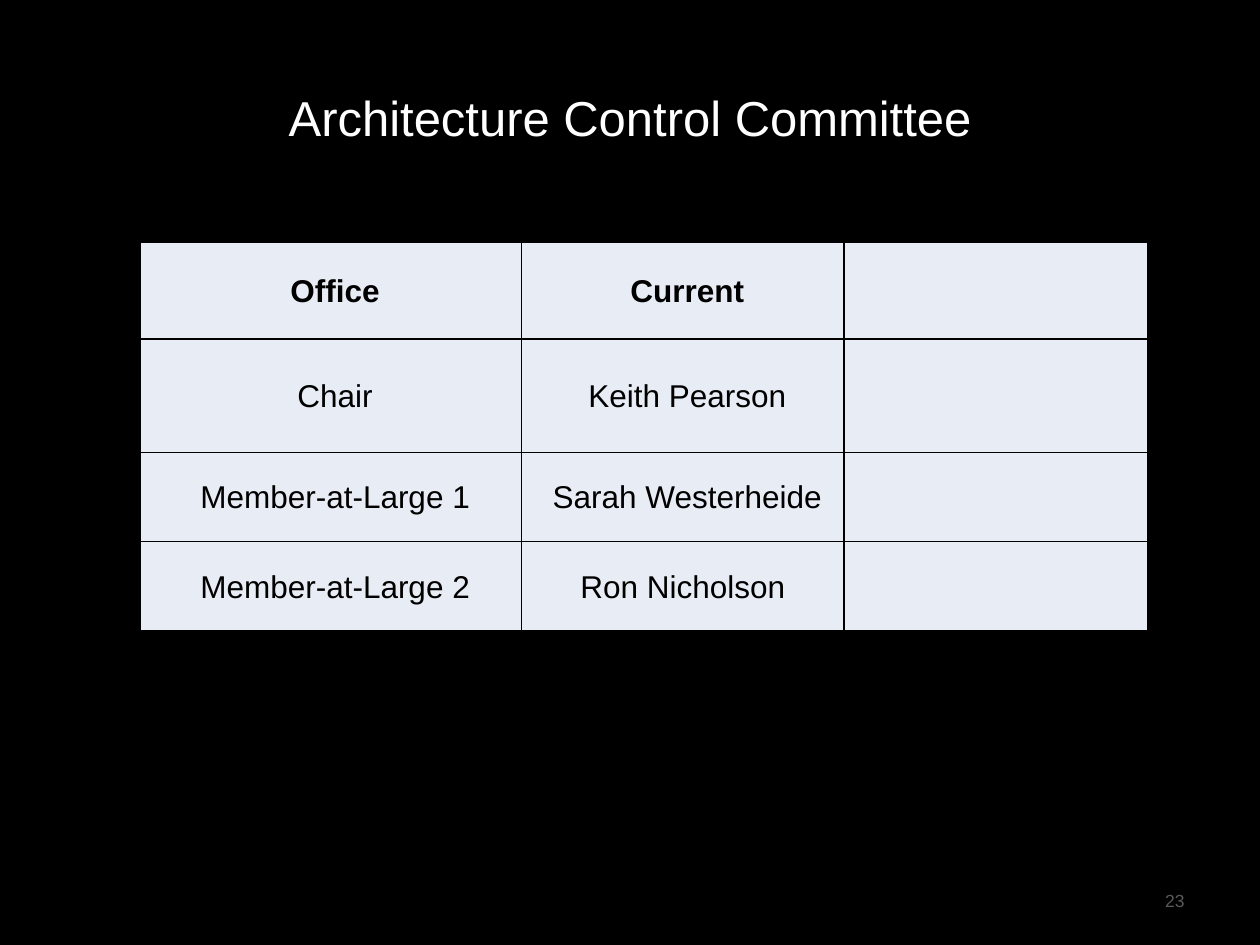
import pptx
import pptx.util
import pptx.dml.color
import pptx.enum.text
import pptx.oxml
from pptx.util import Inches

FONT = "Arial"
BLACK, WHITE, GRAY, PALE_BLUE = "000000", "FFFFFF", "595959", "E8ECF4"
ALIGN = pptx.enum.text.PP_ALIGN
MIDDLE = pptx.enum.text.MSO_ANCHOR.MIDDLE

COLUMN_WIDTHS = [3.03, 2.56, 2.41]
ROW_HEIGHTS = [0.77, 0.9, 0.71, 0.71]
COMMITTEE = [
    [" Office", " Current", ""],
    [" Chair", " Keith Pearson", ""],
    [" Member-at-Large 1", " Sarah Westerheide", ""],
    [" Member-at-Large 2", "Ron Nicholson", ""],
]


def color(value):
    return pptx.dml.color.RGBColor.from_string(value)


def set_text(text_frame, text, size, text_color, alignment, bold=False):
    paragraph = text_frame.paragraphs[0]
    paragraph.text = text
    paragraph.alignment = alignment
    font = paragraph.font
    font.name, font.size, font.bold = FONT, pptx.util.Pt(size), bold
    font.color.rgb = color(text_color)


def add_text(slide, box, text, size, text_color, alignment):
    shape = slide.shapes.add_textbox(*map(Inches, box))
    shape.text_frame.word_wrap = True
    shape.text_frame.vertical_anchor = MIDDLE
    set_text(shape.text_frame, text, size, text_color, alignment)


def set_borders(cell, line_color, width):
    properties = cell._tc.get_or_add_tcPr()
    for index, side in enumerate(("lnL", "lnR", "lnT", "lnB")):
        # Borders come before the fill in the cell properties
        properties.insert(index, pptx.oxml.parse_xml(
            f'<a:{side} xmlns:a="http://schemas.openxmlformats.org/drawingml/2006/main"'
            f' w="{pptx.util.Pt(width)}"><a:solidFill><a:srgbClr val="{line_color}"/>'
            f'</a:solidFill></a:{side}>'))


def add_committee_table(slide, left, top):
    table = slide.shapes.add_table(
        len(ROW_HEIGHTS), len(COLUMN_WIDTHS), Inches(left), Inches(top),
        Inches(sum(COLUMN_WIDTHS)), Inches(sum(ROW_HEIGHTS))).table
    for column, width in zip(table.columns, COLUMN_WIDTHS):
        column.width = Inches(width)
    for row, height in zip(table.rows, ROW_HEIGHTS):
        row.height = Inches(height)

    for row_index, texts in enumerate(COMMITTEE):
        for column_index, text in enumerate(texts):
            cell = table.cell(row_index, column_index)
            cell.fill.solid()
            cell.fill.fore_color.rgb = color(PALE_BLUE)
            cell.vertical_anchor = MIDDLE
            cell.margin_left = cell.margin_right = cell.margin_top = Inches(0.01)
            cell.margin_bottom = 0
            set_borders(cell, BLACK, 1)
            if text:
                set_text(cell.text_frame, text, 18, BLACK, ALIGN.CENTER,
                         bold=row_index == 0)


def main():
    presentation = pptx.Presentation()
    presentation.slide_width, presentation.slide_height = Inches(10), Inches(7.5)
    slide = presentation.slides.add_slide(presentation.slide_layouts[6])
    slide.background.fill.solid()
    slide.background.fill.fore_color.rgb = color(BLACK)

    # Title, table and slide number
    add_text(slide, (0.5, 0.3, 9, 1.25), "Architecture Control Committee",
             28, WHITE, ALIGN.CENTER)
    add_committee_table(slide, 1.11, 1.92)
    add_text(slide, (7.17, 6.95, 2.33, 0.4), "23", 10, GRAY, ALIGN.RIGHT)

    presentation.save("out.pptx")


if __name__ == "__main__":
    main()
